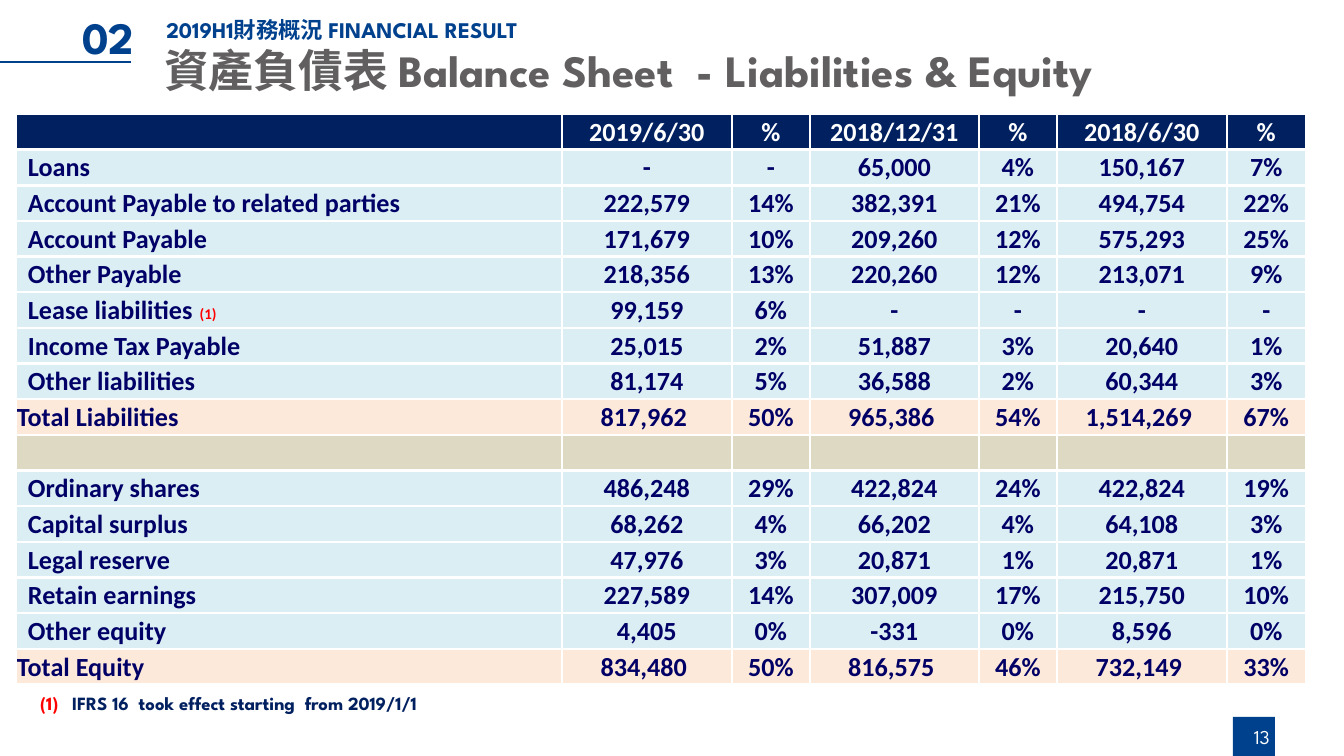
from lxml.etree import SubElement
from pptx import Presentation
from pptx.dml.color import RGBColor
from pptx.enum.shapes import MSO_CONNECTOR as Connector, MSO_SHAPE as Shape
from pptx.enum.text import MSO_ANCHOR as Anchor, PP_ALIGN as Align
from pptx.oxml.ns import qn
from pptx.util import Emu, Pt

WHITE = RGBColor(0xFF, 0xFF, 0xFF)
BLUE = RGBColor(0x00, 0x41, 0x8E)
NAVY = RGBColor(0x00, 0x20, 0x60)
INK = RGBColor(0x00, 0x00, 0x66)
GRAY = RGBColor(0x61, 0x5F, 0x5F)
RED = RGBColor(0xFF, 0x00, 0x00)
PALE_BLUE = RGBColor(0xDB, 0xEE, 0xF3)
PEACH = RGBColor(0xFD, 0xE9, 0xD9)
SAND = RGBColor(0xDD, 0xD9, 0xC3)

SPARTAN = "League Spartan"
CALIBRI = "Calibri"
CJK = "Noto Sans CJK SC"

COLUMN_WIDTHS = [546, 170, 78, 169, 78, 170, 79]
HEADER, ITEM, TOTAL, GAP = "header", "item", "total", "gap"
# Row kind: fill, text colour, left margin of the label
ROW_STYLES = {
    HEADER: (NAVY, WHITE, 1),
    ITEM: (PALE_BLUE, INK, 12),
    TOTAL: (PEACH, INK, 1),
    GAP: (SAND, INK, 1),
}
ROWS = [
    (HEADER, ["", "2019/6/30", "%", "2018/12/31", "%", "2018/6/30", "%"]),
    (ITEM, ["Loans", "-", "-", "65,000", "4%", "150,167", "7%"]),
    (ITEM, ["Account Payable to related parties", "222,579", "14%", "382,391", "21%", "494,754", "22%"]),
    (ITEM, ["Account Payable", "171,679", "10%", "209,260", "12%", "575,293", "25%"]),
    (ITEM, ["Other Payable", "218,356", "13%", "220,260", "12%", "213,071", "9%"]),
    (ITEM, ["Lease liabilities", "99,159", "6%", "-", "-", "-", "-"]),
    (ITEM, ["Income Tax Payable", "25,015", "2%", "51,887", "3%", "20,640", "1%"]),
    (ITEM, ["Other liabilities", "81,174", "5%", "36,588", "2%", "60,344", "3%"]),
    (TOTAL, ["Total Liabilities", "817,962 ", "50%", "965,386 ", "54%", "1,514,269 ", "67%"]),
    (GAP, [""] * 7),
    (ITEM, ["Ordinary shares", "486,248", "29%", "422,824", "24%", "422,824", "19%"]),
    (ITEM, ["Capital surplus", "68,262", "4%", "66,202", "4%", "64,108", "3%"]),
    (ITEM, ["Legal reserve", "47,976", "3%", "20,871", "1%", "20,871", "1%"]),
    (ITEM, ["Retain earnings", "227,589", "14%", "307,009", "17%", "215,750", "10%"]),
    (ITEM, ["Other equity", "4,405", "0%", "-331", "0%", "8,596", "0%"]),
    (TOTAL, ["Total Equity", "834,480 ", "50%", "816,575 ", "46%", "732,149 ", "33%"]),
]
NOTE_MARKS = {"Lease liabilities": "  (1)"}


def px(length):
    return Emu(round(length * 914400 / 134.4))


def add_run(paragraph, text, size, color, font=SPARTAN, bold=True):
    run = paragraph.add_run()
    run.text = text
    run.font.size = Pt(size)
    run.font.bold = bold
    run.font.name = font
    run.font.color.rgb = color
    SubElement(run.font._element, qn("a:ea")).set("typeface", CJK)


def add_text(slide, left, top, width, height, runs, anchor=Anchor.TOP):
    """Place a wrapping one-paragraph text box and return its paragraph."""
    box = slide.shapes.add_textbox(px(left), px(top), px(width), px(height))
    box.text_frame.word_wrap = True
    box.text_frame.vertical_anchor = anchor
    paragraph = box.text_frame.paragraphs[0]
    for run in runs:
        add_run(paragraph, *run)
    return paragraph


def add_heading(slide, left, top):
    # Rule under the section number
    rule = slide.shapes.add_connector(
        Connector.STRAIGHT, px(left - 1), px(top + 62), px(left + 131), px(top + 62))
    rule.line.color.rgb = BLUE
    rule.line.width = Pt(1.5)
    SubElement(rule._element.spPr, qn("a:effectLst"))

    # Section title, page title and section number
    add_text(slide, left + 153, top + 8, 1109, 43,
             [("2019H1財務概況 FINANCIAL RESULT", 12, BLUE)], Anchor.MIDDLE)
    title = add_text(slide, left + 151, top + 36, 1068, 71, [
        ("資產負債表 ", 24, GRAY, CJK),
        ("Balance Sheet  - Liabilities & Equity", 24, GRAY),
    ])
    number = add_text(slide, left + 69, top + 3, 95, 63, [("02", 24, BLUE)])
    for paragraph in (title, number):
        paragraph.space_before = Pt(4.8)


def add_borders(cell):
    properties = cell._tc.get_or_add_tcPr()
    for side in ("lnL", "lnR", "lnT", "lnB"):
        line = SubElement(properties, qn(f"a:{side}"), w=str(Pt(1.5)))
        fill = SubElement(line, qn("a:solidFill"))
        SubElement(fill, qn("a:srgbClr"), val=str(WHITE))


def fill_cell(cell, text, kind, is_label):
    fill, color, label_margin = ROW_STYLES[kind]
    add_borders(cell)
    cell.fill.solid()
    cell.fill.fore_color.rgb = fill
    cell.vertical_anchor = Anchor.MIDDLE
    cell.margin_left = px(label_margin if is_label else 1)
    cell.margin_right = cell.margin_top = px(1)
    cell.margin_bottom = 0
    paragraph = cell.text_frame.paragraphs[0]
    paragraph.alignment = Align.LEFT if is_label else Align.CENTER
    if text:
        add_run(paragraph, text, 14, color, CALIBRI)
    else:
        # Keeps an empty cell from stretching its row
        SubElement(paragraph._p, qn("a:endParaRPr"), sz="1400")
    if text in NOTE_MARKS:
        add_run(paragraph, NOTE_MARKS[text], 8, RED, CALIBRI)


def add_balance_table(slide, left, top, height):
    frame = slide.shapes.add_table(
        len(ROWS), len(COLUMN_WIDTHS), px(left), px(top), px(sum(COLUMN_WIDTHS)), px(height))
    table = frame.table
    table.first_row = table.horz_banding = False
    for column, width in zip(table.columns, COLUMN_WIDTHS):
        column.width = px(width)
    for row_index, (kind, texts) in enumerate(ROWS):
        table.rows[row_index].height = px(height / len(ROWS))
        for column_index, text in enumerate(texts):
            fill_cell(table.cell(row_index, column_index), text, kind, column_index == 0)


def add_footnote(slide, left, top, width, height):
    paragraph = add_text(slide, left, top, width, height, [
        ("(1)", 10, RED),
        ("\tIFRS 16  took effect starting  from 2019/1/1", 10, NAVY),
    ])
    properties = paragraph._p.get_or_add_pPr()
    properties.set("marL", str(px(32)))
    properties.set("indent", str(-px(32)))


def add_page_number(slide, left, top):
    square = slide.shapes.add_shape(Shape.RECTANGLE, px(left), px(top), px(42), px(39))
    square.shadow.inherit = False
    square.fill.solid()
    square.fill.fore_color.rgb = BLUE
    square.line.fill.background()
    paragraph = add_text(slide, left - 12, top, 62, 40,
                         [("13", 10.5, WHITE, SPARTAN, False)], Anchor.MIDDLE)
    paragraph.alignment = Align.RIGHT


def main():
    presentation = Presentation()
    presentation.slide_width = px(1344)
    presentation.slide_height = px(756)
    slide = presentation.slides.add_slide(presentation.slide_layouts[6])
    add_page_number(slide, 1233, 717)
    add_heading(slide, 0, 0)
    add_footnote(slide, 27, 685, 1208, 36)
    add_balance_table(slide, 16, 114, 571)
    presentation.save("out.pptx")


if __name__ == "__main__":
    main()
